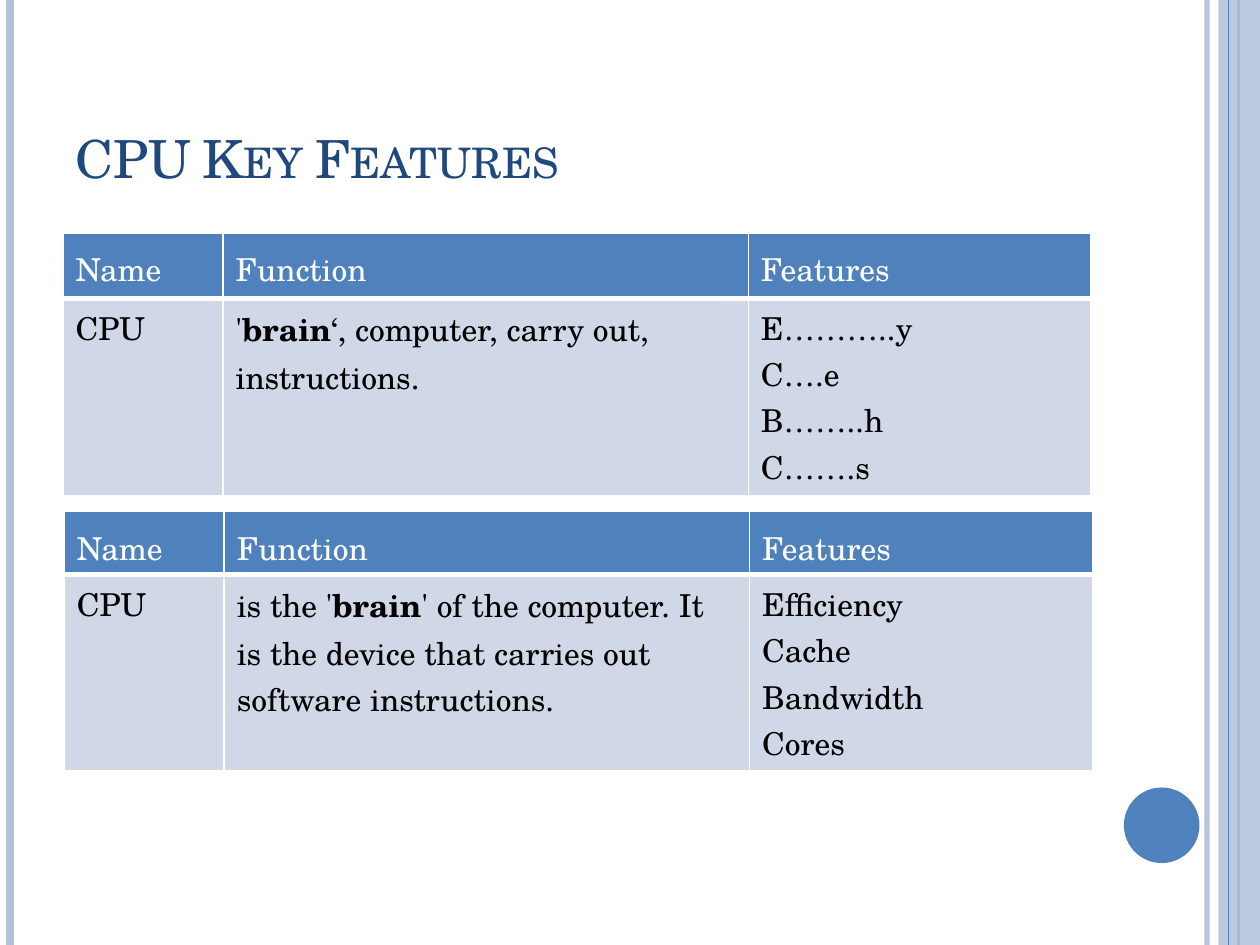
from lxml.etree import SubElement as Sub
from pptx import Presentation
from pptx.dml.color import RGBColor as RGB
from pptx.enum.shapes import MSO_CONNECTOR as Link, MSO_SHAPE as Form
from pptx.enum.text import MSO_ANCHOR as Anchor
from pptx.oxml.ns import qn
from pptx.util import Inches, Pt

HUE = {"blue": "4F81BD", "navy": "1F497D", "mist": "B3C1DB",
       "pale": "D0D8E8", "white": "FFFFFF", "black": "000000"}
FONT = "TeX Gyre Schola"
COLS, ROWS = 100, 75
HEAD = ["Name", "Function", "Features"]
WIDE = [12.7, 41.7, 27.2]
HIGH = [5, 15.6]


def tint(name):
    return RGB.from_string(HUE[name])


def fade(fill, share):
    tone = fill._xPr.find(qn("a:solidFill"))[0]
    Sub(tone, qn("a:alpha"), val=str(share * 1000))


class Deck:
    def __init__(self):
        self.prs = Presentation()
        self.prs.slide_width, self.prs.slide_height = Inches(10), Inches(7.5)
        self.slide = self.prs.slides.add_slide(self.prs.slide_layouts[6])
        self.shapes = self.slide.shapes

    def x(self, cols):
        return round(self.prs.slide_width * cols / COLS)

    def y(self, rows):
        return round(self.prs.slide_height * rows / ROWS)

    def box(self, x, y, w, h):
        return self.x(x), self.y(y), self.x(w), self.y(h)

    def rule(self, x, hue, size, share=100):
        line = self.shapes.add_connector(
            Link.STRAIGHT, self.x(x), 0, self.x(x), self.y(ROWS))
        line.line.color.rgb = tint(hue)
        line.line.width = Pt(size)
        if share < 100:
            fade(line.line.fill, share)
        Sub(line._element.spPr, qn("a:effectLst"))

    def shape(self, form, place, hue, share=100):
        item = self.shapes.add_shape(form, *self.box(*place))
        item.shadow.inherit = False
        item.fill.solid()
        item.fill.fore_color.rgb = tint(hue)
        item.line.fill.background()
        if share < 100:
            fade(item.fill, share)

    def run(self, para, text, hue, **style):
        run = para.add_run()
        run.text = text
        for key, val in {"name": FONT, "size": Pt(18), **style}.items():
            setattr(run.font, key, val)
        run.font.color.rgb = tint(hue)
        return run

    def title(self, place, text):
        frame = self.shapes.add_textbox(*self.box(*place)).text_frame
        frame.word_wrap = True
        frame.vertical_anchor = Anchor.BOTTOM
        run = self.run(frame.paragraphs[0], text, "navy", size=Pt(30))
        run.font._element.set("cap", "small")

    def cell(self, cell, paras, fill, hue, edges, space):
        props = cell._tc.get_or_add_tcPr()
        for side, size in edges.items():
            edge = Sub(props, qn("a:ln" + side), w=str(Pt(size)))
            paint = Sub(edge, qn("a:solidFill"))
            Sub(paint, qn("a:srgbClr"), val=HUE["white"])
        cell.fill.solid()
        cell.fill.fore_color.rgb = tint(fill)
        frame = cell.text_frame
        for n, parts in enumerate(paras):
            para = frame.add_paragraph() if n else frame.paragraphs[0]
            para.line_spacing = space
            for k, part in enumerate(parts):
                self.run(para, part, hue, bold=k == 1)

    def table(self, x, y, task, traits):
        place = self.box(x, y, sum(WIDE), sum(HIGH))
        grid = self.shapes.add_table(2, 3, *place).table
        for col, wide in zip(grid.columns, WIDE):
            col.width = self.x(wide)
        for row, high in zip(grid.rows, HIGH):
            row.height = self.y(high)
        body = [[["CPU"]], [task], [[word] for word in traits]]
        for n, (name, paras) in enumerate(zip(HEAD, body)):
            self.cell(grid.cell(0, n), [[name]], "blue", "white",
                      {"L": 1, "R": 1, "T": 1, "B": 3}, 1.14)
            self.cell(grid.cell(1, n), paras, "pale", "black",
                      {"L": 1, "R": 1, "T": 3, "B": 1}, 1.0)


def main():
    deck = Deck()
    deck.rule(95.8, "mist", 3, 93)
    deck.rule(0.8, "mist", 4.5)
    deck.rule(98.3, "blue", 1.5)
    deck.shape(Form.RECTANGLE, (96.7, 0, 3.3, ROWS), "mist", 87)
    deck.rule(97.5, "blue", 0.75)
    deck.shape(Form.OVAL, (89.2, 62.5, 6, 6), "blue")
    deck.table(5, 18.5, ["'", "brain", "‘, computer, carry out, instructions."],
               ["E………..y", "C….e", "B……..h", "C…….s"])
    deck.title((5, 3, 81.7, 12.5), "CPU Key Features")
    deck.table(5.1, 40.6, ["is the '", "brain", "' of the computer. It is the "
                           "device that carries out software instructions."],
               ["Efficiency", "Cache", "Bandwidth", "Cores"])
    deck.prs.save("out.pptx")


if __name__ == "__main__":
    main()
